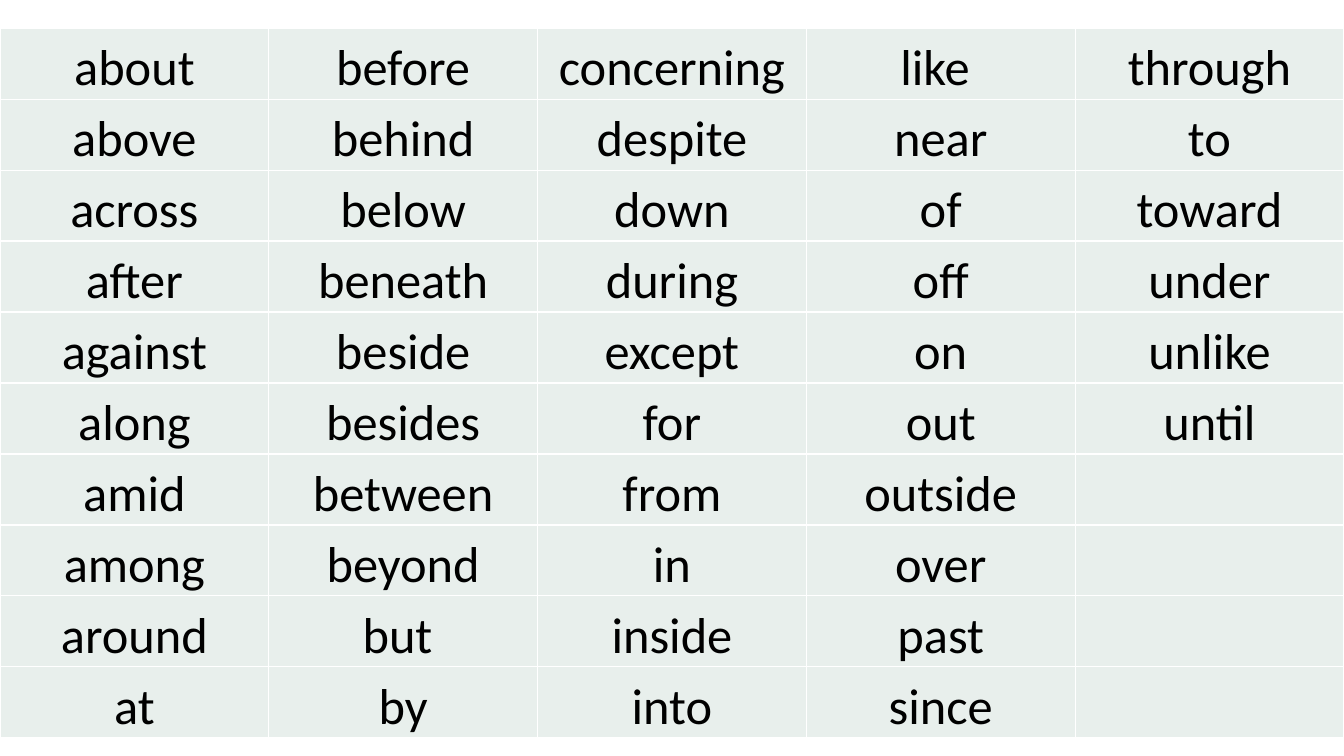
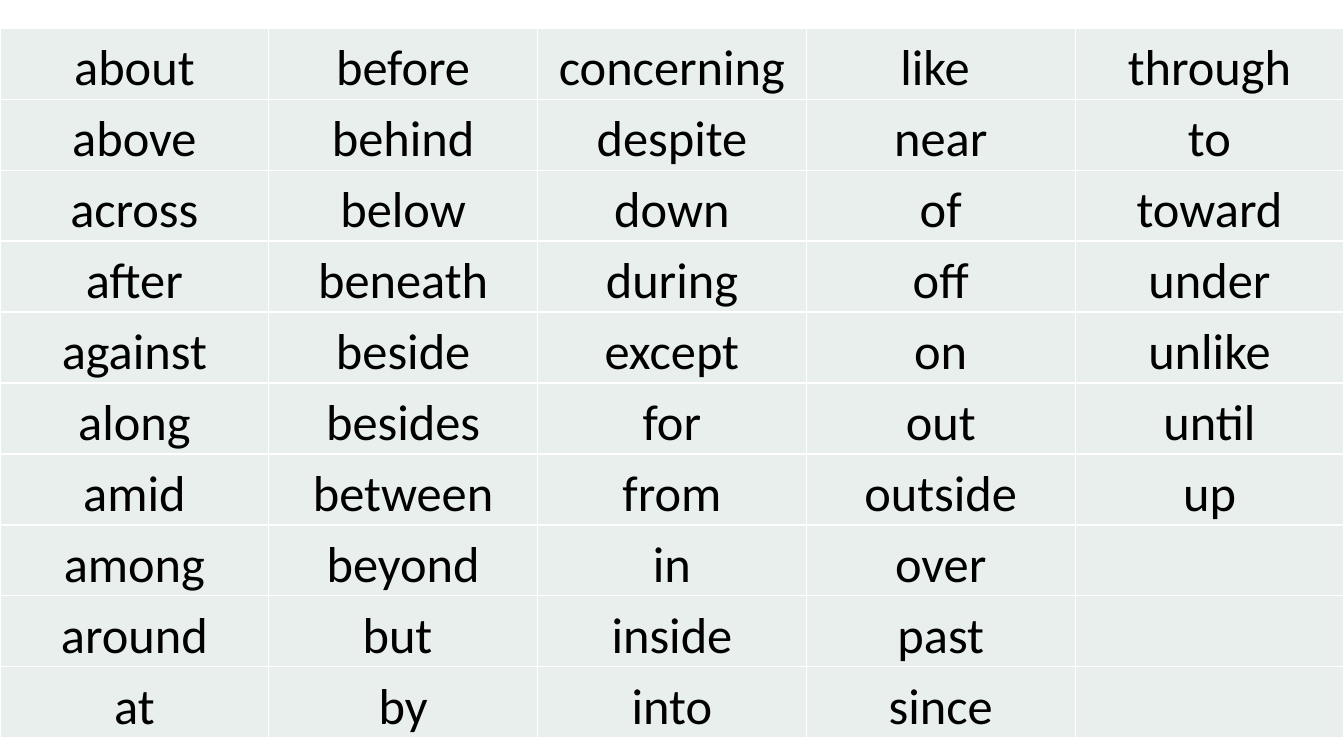
"""Build two slides that list prepositions in a five-column table."""
from dataclasses import dataclass

from lxml.etree import SubElement
from pptx import Presentation
from pptx.dml.color import RGBColor
from pptx.enum.text import PP_ALIGN
from pptx.oxml.ns import qn
from pptx.presentation import Presentation as Deck
from pptx.table import _Cell
from pptx.util import Inches, Pt

BLACK = RGBColor(0x00, 0x00, 0x00)
WHITE = RGBColor(0xFF, 0xFF, 0xFF)
PALE_GREEN = RGBColor(0xE8, 0xEF, 0xEC)

FONT = "Calibri"
FONT_SIZE = Pt(36)
LINE_SPACING = 1.15
SIDE_MARGIN = Inches(0.07)
BORDER = Pt(1)
BORDER_TAGS = ("a:lnL", "a:lnR", "a:lnT", "a:lnB")

SLIDE_W, SLIDE_H = Inches(13.33), Inches(7.5)
TABLE_TOP = Inches(0.28)
ROWS = 10
ROW_H = Inches(0.7)
BLANK_LAYOUT = 6

FULL_COLUMNS = (
    ("about", "above", "across", "after", "against",
     "along", "amid", "among", "around", "at"),
    ("before", "behind", "below", "beneath", "beside",
     "besides", "between", "beyond", "but ", "by"),
    ("concerning", "despite", "down", "during", "except",
     "for", "from", "in", "inside", "into"),
    ("like ", "near", "of", "off", "on",
     "out", "outside", "over", "past", "since"),
)
LAST_COLUMN = ("through", "to", "toward", "under", "unlike", "until")


@dataclass(frozen=True)
class WordSlide:
    """The words in each column of one slide."""
    columns: tuple[tuple[str, ...], ...]


WORD_SLIDES = (
    WordSlide((*FULL_COLUMNS, LAST_COLUMN)),
    WordSlide((*FULL_COLUMNS, (*LAST_COLUMN, "up"))),
)


def style_cell(cell: _Cell) -> None:
    """Give a cell its borders, fill and margins."""
    tc_pr = cell._tc.get_or_add_tcPr()
    for tag in BORDER_TAGS:
        ln = SubElement(tc_pr, qn(tag), w=str(BORDER))
        fill = SubElement(ln, qn("a:solidFill"))
        SubElement(fill, qn("a:srgbClr"), val=str(WHITE))
    cell.fill.solid()
    cell.fill.fore_color.rgb = PALE_GREEN
    cell.margin_left = cell.margin_right = SIDE_MARGIN
    cell.margin_top = cell.margin_bottom = 0


def write_word(cell: _Cell, word: str) -> None:
    """Write one centred word in a cell."""
    p = cell.text_frame.paragraphs[0]
    p.text = word
    p.alignment = PP_ALIGN.CENTER
    p.line_spacing = LINE_SPACING
    font = p.runs[0].font
    font.name, font.size, font.bold = FONT, FONT_SIZE, False
    font.color.rgb = BLACK


def add_word_slide(prs: Deck, words: WordSlide) -> None:
    """Add a slide whose table spans the full width."""
    s = prs.slides.add_slide(prs.slide_layouts[BLANK_LAYOUT])
    table = s.shapes.add_table(ROWS, len(words.columns), 0, TABLE_TOP,
                               SLIDE_W, ROWS * ROW_H).table
    table.first_row = table.horz_banding = False
    for cell in table.iter_cells():
        style_cell(cell)
    for col, column in enumerate(words.columns):
        for row, word in enumerate(column):
            write_word(table.cell(row, col), word)


def main() -> None:
    """Build and save the presentation."""
    prs = Presentation()
    prs.slide_width, prs.slide_height = SLIDE_W, SLIDE_H
    for words in WORD_SLIDES:
        add_word_slide(prs, words)
    prs.save("out.pptx")


if __name__ == "__main__":
    main()
